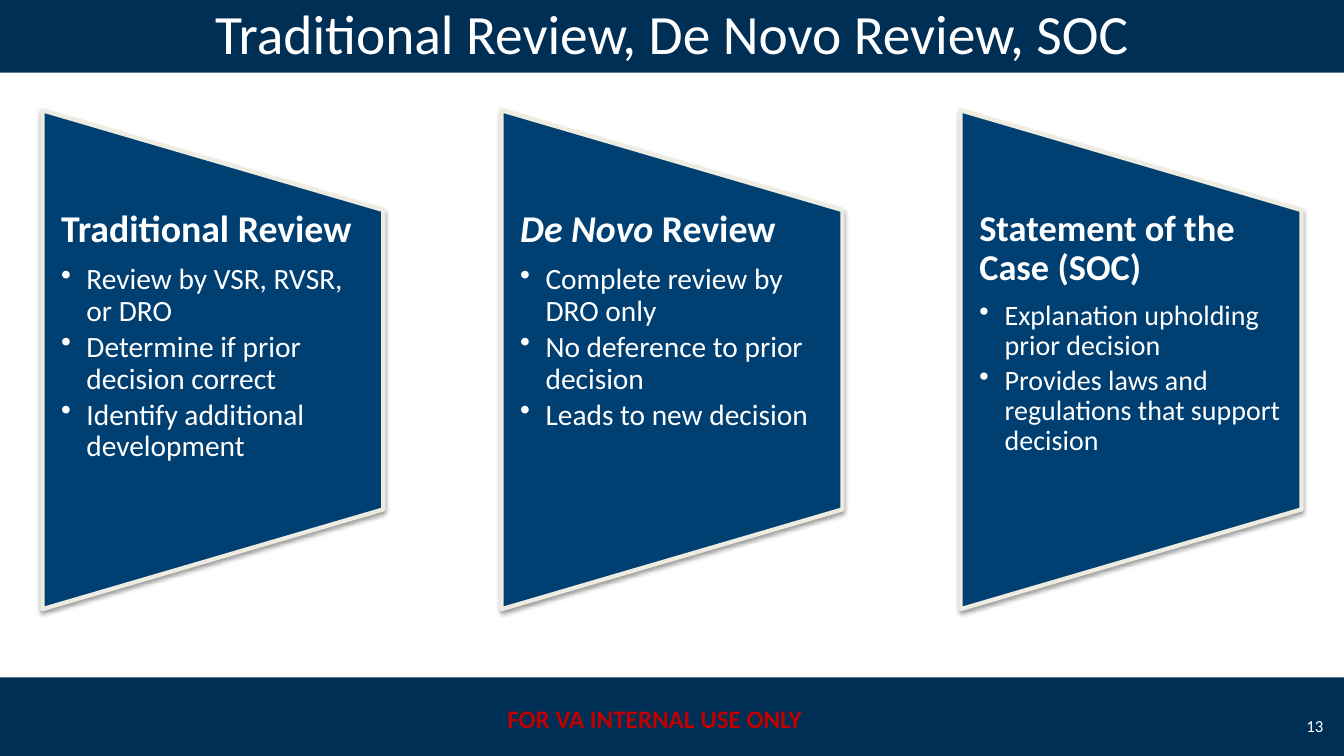
from collections import namedtuple
from dataclasses import dataclass

from lxml.etree import SubElement
from pptx import Presentation
from pptx.dml.color import RGBColor
from pptx.enum.shapes import MSO_SHAPE
from pptx.enum.text import MSO_ANCHOR, PP_ALIGN
from pptx.oxml.ns import qn
from pptx.util import Cm, Pt

Box = namedtuple("Box", "left top width height")


@dataclass(frozen=True)
class Theme:
    font: str = "Calibri"
    band: RGBColor = RGBColor(0x00, 0x2F, 0x56)
    panel: RGBColor = RGBColor(0x00, 0x3F, 0x72)
    edge: RGBColor = RGBColor(0xEE, 0xEC, 0xE1)
    light: RGBColor = RGBColor(0xFF, 0xFF, 0xFF)
    warning: RGBColor = RGBColor(0xC0, 0x00, 0x00)
    title_size: float = 39.6
    notice_size: float = 18
    number_size: float = 12


THEME = Theme()
PAGE_WIDTH, PAGE_HEIGHT = 33.87, 19.05
BAND_HEIGHT = 2.03

# Each panel: heading spans as (text, italic), heading size, bullet size, bullets
PANELS = [
    ([("Traditional Review", False)], 27, 21,
     ["Review by VSR, RVSR, or DRO", "Determine if prior decision correct",
      "Identify additional development"]),
    ([("De Novo ", True), ("Review", False)], 27, 21,
     ["Complete review by DRO only", "No deference to prior decision",
      "Leads to new decision"]),
    ([("Statement of the Case (SOC)", False)], 26, 20,
     ["Explanation upholding prior decision",
      "Provides laws and regulations that support decision"]),
]


def in_cm(box):
    return [Cm(round(value, 2)) for value in box]


def apply(target, values):
    for name, value in values.items():
        setattr(target, name, value)


def add_span(para, text, size, color=THEME.light, bold=False, italic=False):
    span = para.add_run()
    span.text = text
    apply(span.font, {"name": THEME.font, "size": Pt(size), "bold": bold, "italic": italic})
    span.font.color.rgb = color


def add_text_frame(page, box, **format_values):
    frame = page.shapes.add_textbox(*in_cm(box)).text_frame
    apply(frame, {"word_wrap": True, **format_values})
    return frame


def add_line_of_text(page, box, text, size, alignment, **look):
    frame = add_text_frame(page, box, vertical_anchor=MSO_ANCHOR.MIDDLE)
    para = frame.paragraphs[0]
    para.alignment = alignment
    add_span(para, text, size, **look)


def add_band(page, box):
    band = page.shapes.add_shape(MSO_SHAPE.RECTANGLE, *in_cm(box))
    band.shadow.inherit = False
    band.fill.solid()
    band.fill.fore_color.rgb = THEME.band
    band.line.fill.background()


def add_header(page, box):
    add_band(page, box)
    add_line_of_text(page, box, "Traditional Review, De Novo Review, SOC",
                     THEME.title_size, PP_ALIGN.CENTER)


def add_footer(page, box):
    add_band(page, box)
    notice = Box(box.left + 11, box.top + 0.53, 11, 1.02)
    number = Box(box.left + 32.18, box.top + 0.71, 1.42, 1.02)
    add_line_of_text(page, notice, "FOR VA INTERNAL USE ONLY", THEME.notice_size,
                     PP_ALIGN.CENTER, color=THEME.warning, bold=True)
    add_line_of_text(page, number, "13", THEME.number_size, PP_ALIGN.RIGHT)


def add_drop_shadow(shape):
    shape.shadow.inherit = False
    effects = shape._element.spPr.find(qn("a:effectLst"))
    shadow = SubElement(effects, qn("a:outerShdw"), blurRad=str(Pt(3.1)),
                        dist=str(Pt(1.6)), dir="5400000", rotWithShape="0")
    color = SubElement(shadow, qn("a:srgbClr"), val="000000")
    SubElement(color, qn("a:alpha"), val="38000")


def add_trapezoid(page, box):
    """Turn the preset a quarter so that its long side is the left edge of the box."""
    turned = Box(box.left + (box.width - box.height) / 2,
                 box.top + (box.height - box.width) / 2, box.height, box.width)
    shape = page.shapes.add_shape(MSO_SHAPE.FLOWCHART_MANUAL_OPERATION, *in_cm(turned))
    shape.rotation = 270
    shape.fill.solid()
    shape.fill.fore_color.rgb = THEME.panel
    shape.line.color.rgb = THEME.edge
    shape.line.width = Pt(3)
    add_drop_shadow(shape)


def add_bullet(para):
    properties = para._p.get_or_add_pPr()
    indent = Cm(0.64)
    properties.set("marL", str(indent))
    properties.set("indent", str(-indent))
    SubElement(properties, qn("a:buChar"), char="•")


def add_panel(page, box, heading, heading_size, bullet_size, bullets):
    add_trapezoid(page, box)
    text_box = Box(box.left, box.top + box.height / 5, box.width, box.height * 3 / 5)
    frame = add_text_frame(page, text_box, margin_left=Cm(0.47), margin_right=Cm(0.47),
                           margin_top=0, margin_bottom=0)
    para = frame.paragraphs[0]
    apply(para, {"line_spacing": 0.9, "space_after": Pt(heading_size * 0.35)})
    for text, italic in heading:
        add_span(para, text, heading_size, bold=True, italic=italic)
    for text in bullets:
        para = frame.add_paragraph()
        add_bullet(para)
        apply(para, {"line_spacing": 0.9, "space_after": Pt(bullet_size * 0.15)})
        add_span(para, text, bullet_size)


def main():
    deck = Presentation()
    apply(deck, {"slide_width": Cm(PAGE_WIDTH), "slide_height": Cm(PAGE_HEIGHT)})
    page = deck.slides.add_slide(deck.slide_layouts[6])
    add_footer(page, Box(0, 17.07, PAGE_WIDTH, BAND_HEIGHT))
    add_header(page, Box(0, -0.2, PAGE_WIDTH, BAND_HEIGHT))
    for index, panel in enumerate(PANELS):
        add_panel(page, Box(1.07 + index * 11.57, 2.78, 8.59, 12.57), *panel)
    deck.save("out.pptx")


if __name__ == "__main__":
    main()
